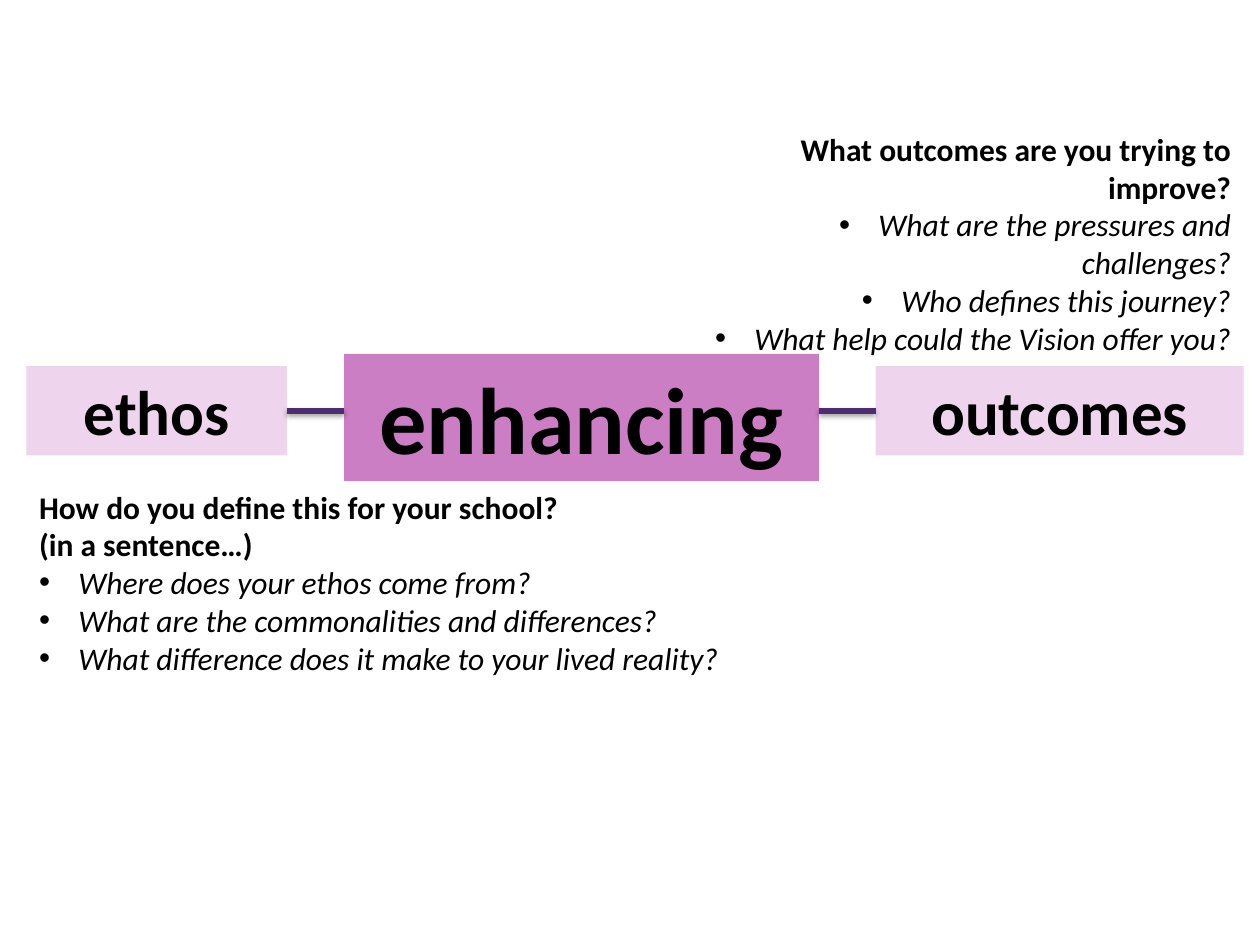
from lxml.etree import SubElement
from pptx import Presentation
from pptx.dml.color import RGBColor
from pptx.enum.shapes import MSO_CONNECTOR, MSO_SHAPE
from pptx.enum.text import MSO_ANCHOR, MSO_AUTO_SIZE, PP_ALIGN
from pptx.oxml import parse_xml
from pptx.oxml.ns import nsdecls, qn
from pptx.util import Pt

COLORS = {"text": "000000", "pale": "EED4EC", "strong": "CC7EC5", "line": "4A2D72"}
INDENT = 22.5
MIDDLE = 234.75

ETHOS = [
    "How do you define this for your school?",
    "(in a sentence…)",
    "Where does your ethos come from?",
    "What are the commonalities and differences?",
    "What difference does it make to your lived reality?",
]
OUTCOMES = [
    "What outcomes are you trying to improve?",
    "What are the pressures and challenges?",
    "Who defines this journey?",
    "What help could the Vision offer you?",
]


def color(name):
    """Return the named colour."""
    return RGBColor.from_string(COLORS[name])


def place(shape, left, top, width, height):
    """Move and size a shape, in points."""
    shape.left, shape.top = Pt(left), Pt(top)
    shape.width, shape.height = Pt(width), Pt(height)


def write(para, text, size=18, bold=False, italic=False, align=PP_ALIGN.LEFT, bullet=False):
    """Fill a paragraph with formatted text."""
    para.alignment = align
    para.space_before = Pt(0)
    props = para._p.get_or_add_pPr()
    indent = Pt(INDENT) if bullet else 0
    props.set("marL", str(indent))
    props.set("indent", str(-indent))
    if bullet:
        SubElement(props, qn("a:buFont"), typeface="Arial")
        SubElement(props, qn("a:buChar"), char="•")
    else:
        SubElement(props, qn("a:buNone"))
    run = para.add_run()
    run.text = text
    font = run.font
    font.name, font.size = "Calibri", Pt(size)
    font.bold, font.italic = bold, italic
    font.color.rgb = color("text")


def setup(shape):
    """Give a shape top-anchored, wrapped text of fixed size."""
    frame = shape.text_frame
    frame.word_wrap = True
    frame.auto_size = MSO_AUTO_SIZE.NONE
    frame.vertical_anchor = MSO_ANCHOR.TOP
    return frame


def label(shape, text, fill, size):
    """Fill a box and write its word in the centre."""
    shape.fill.solid()
    shape.fill.fore_color.rgb = color(fill)
    shape.line.fill.background()
    write(setup(shape).paragraphs[0], text, size=size, bold=True, align=PP_ALIGN.CENTER)


def box(slide, text, left, width):
    """Add a pale side box on the middle line."""
    height = 51
    shape = slide.shapes.add_shape(
        MSO_SHAPE.RECTANGLE, Pt(left), Pt(MIDDLE - height / 2), Pt(width), Pt(height))
    shape.shadow.inherit = False
    label(shape, text, "pale", 36)


def notes(shape, lines, heads, area, align=PP_ALIGN.LEFT):
    """Write bold heading lines followed by italic bullets."""
    place(shape, *area)
    frame = setup(shape)
    for num, text in enumerate(lines):
        para = frame.add_paragraph() if num else frame.paragraphs[0]
        head = num < heads
        write(para, text, bold=head, italic=not head, align=align, bullet=not head)


def link(slide, start, end):
    """Add a level line with a soft shadow below it."""
    line = slide.shapes.add_connector(
        MSO_CONNECTOR.STRAIGHT, Pt(start), Pt(MIDDLE), Pt(end), Pt(MIDDLE))
    line.line.color.rgb = color("line")
    line.line.width = Pt(3.25)
    line._element.spPr.append(parse_xml(
        f'<a:effectLst {nsdecls("a")}>'
        f'<a:outerShdw blurRad="{Pt(3.1)}" dist="{Pt(1.6)}" dir="5400000" rotWithShape="0">'
        '<a:srgbClr val="000000"><a:alpha val="38000"/></a:srgbClr>'
        '</a:outerShdw></a:effectLst>'))


def main():
    """Build and save the slide."""
    deck = Presentation()
    deck.slide_width, deck.slide_height = Pt(720), Pt(540)
    slide = deck.slides.add_slide(deck.slide_layouts[3])
    title, left, right = slide.placeholders
    box(slide, "ethos", 15.1, 149)
    box(slide, "outcomes", 500.4, 210.3)
    notes(left, ETHOS, 2, (15.1, 275, 432, 116.6))
    notes(right, OUTCOMES, 1, (387.4, 70.6, 323.3, 138.2), PP_ALIGN.RIGHT)
    place(title, 196.6, 202.2, 271.4, 72.7)
    label(title, "enhancing", "strong", 54)
    slide.shapes._spTree.append(title._element)
    link(slide, 164.1, 196.6)
    link(slide, 468, 500.4)
    deck.save("out.pptx")


if __name__ == "__main__":
    main()
